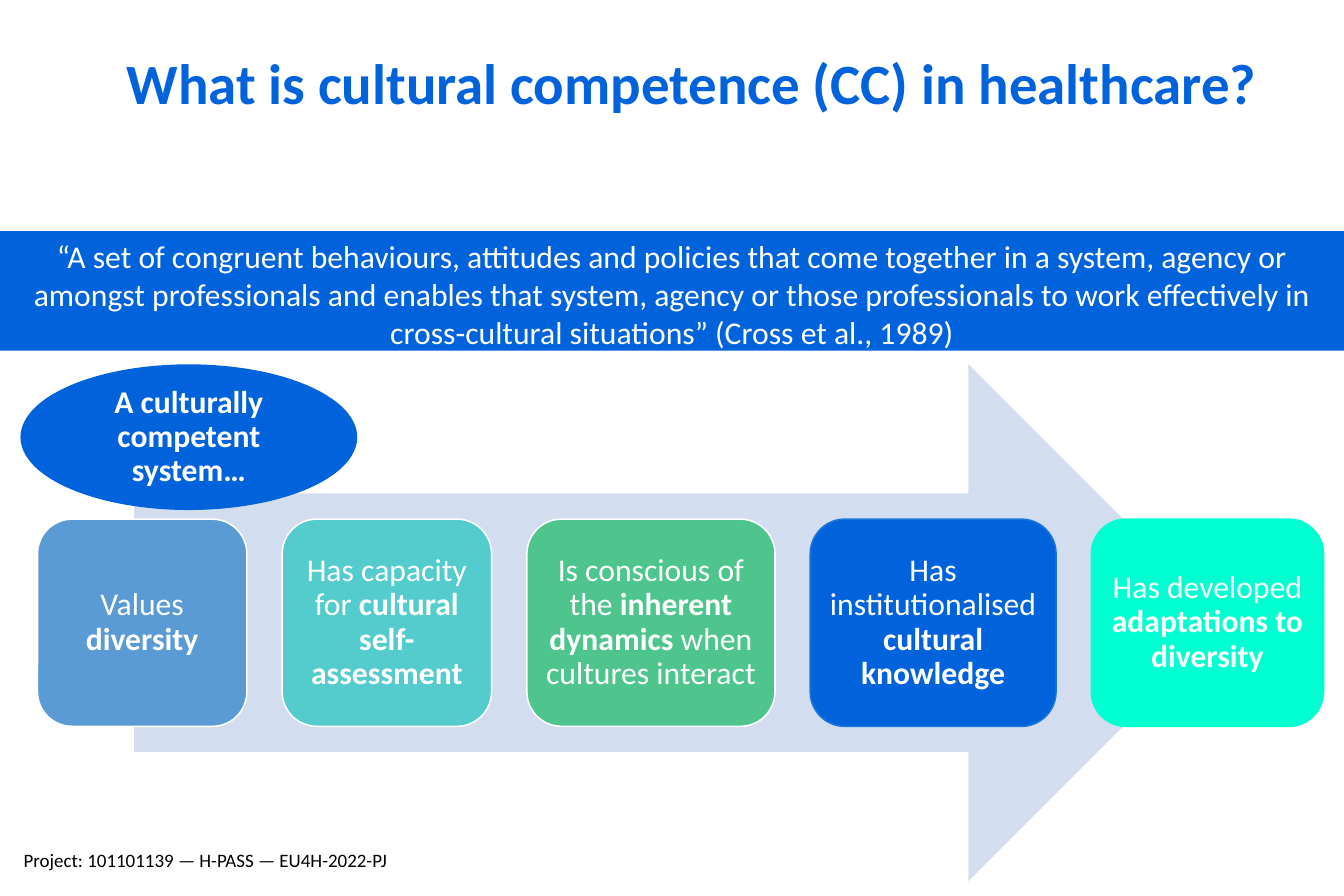
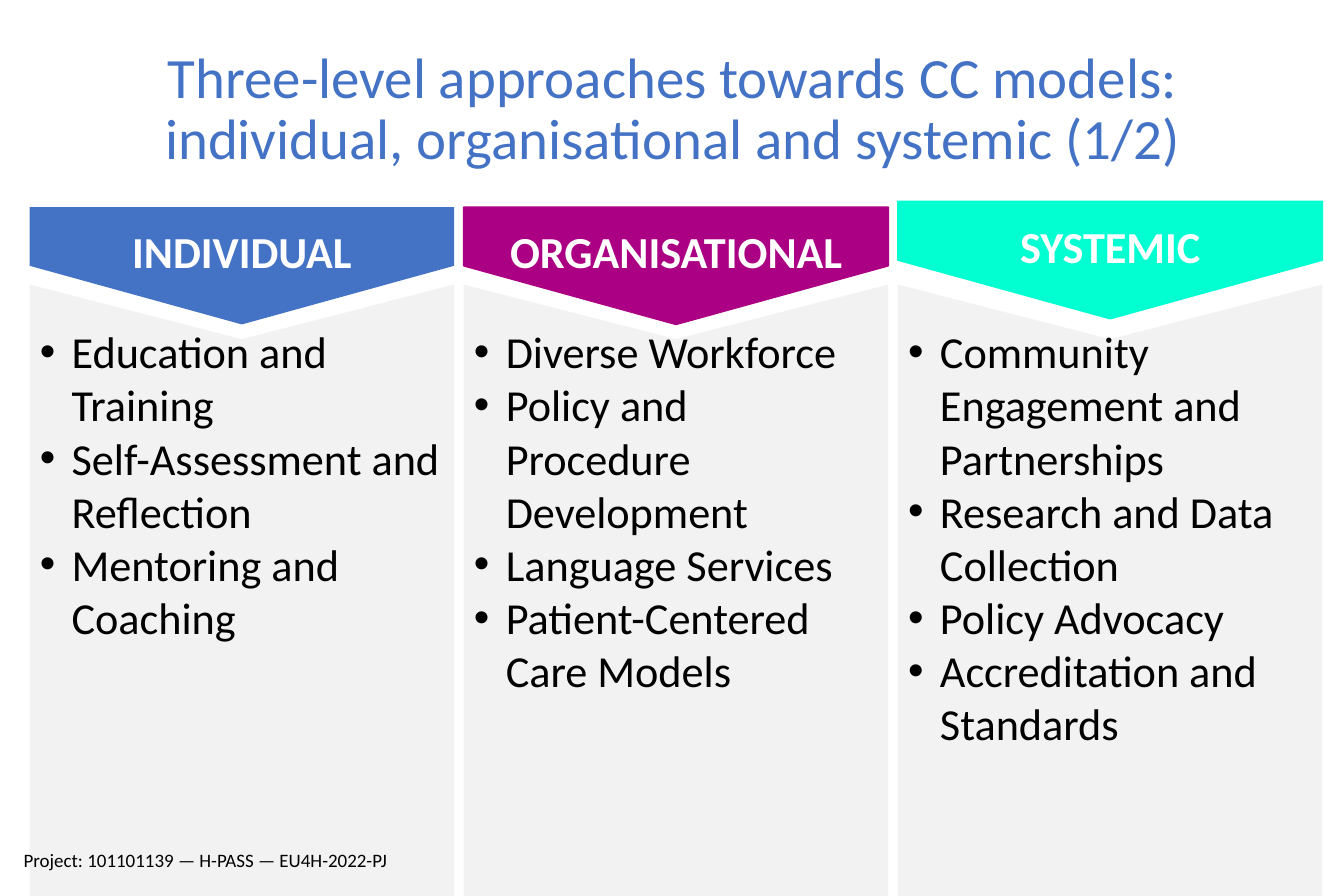
from dataclasses import dataclass
from pptx import Presentation
from pptx.dml.color import RGBColor
from pptx.enum.shapes import MSO_SHAPE
from pptx.enum.text import MSO_ANCHOR, MSO_AUTO_SIZE, PP_ALIGN
from pptx.oxml.ns import qn
from pptx.util import Inches, Pt


@dataclass(frozen=True)
class Theme:
    font: str = "Calibri"
    blue: str = "0063DC"
    blue_edge: str = "1A75DB"
    royal: str = "4472C4"
    sky: str = "5B9BD5"
    teal: str = "54CCCD"
    green: str = "4DC58D"
    mint: str = "02FFD2"
    magenta: str = "AB0084"
    pale: str = "D2DEEF"
    grey: str = "F2F2F2"
    white: str = "FFFFFF"
    black: str = "000000"
    title_size: int = 36
    heading_size: int = 28
    body_size: int = 20
    footer_size: int = 12


THEME = Theme()
FOOTER = "Project: 101101139 — H-PASS — EU4H-2022-PJ"


class Deck:
    def __init__(self, theme):
        self.theme = theme
        self.prs = Presentation()
        self.prs.slide_width = Inches(11.81)
        self.prs.slide_height = Inches(7.87)
        self.slide = None

    def start_slide(self, title, left, top, width, height, color, bold=False):
        self.slide = self.prs.slides.add_slide(self.prs.slide_layouts[5])
        heading = self.slide.shapes.title
        heading.left, heading.top = Inches(left), Inches(top)
        heading.width, heading.height = Inches(width), Inches(height)
        heading.text_frame.text = title
        self.format_text(heading.text_frame, self.theme.title_size, color, bold,
                         anchor=MSO_ANCHOR.TOP, spacing=0.9)

    def format_text(self, frame, size, color, bold=None, align=PP_ALIGN.CENTER,
                    anchor=MSO_ANCHOR.MIDDLE, spacing=None):
        frame.word_wrap = True
        frame.auto_size = MSO_AUTO_SIZE.NONE
        frame.vertical_anchor = anchor
        for paragraph in frame.paragraphs:
            paragraph.alignment = align
            paragraph.line_spacing = spacing
            for run in paragraph.runs:
                run.font.name = self.theme.font
                run.font.size = Pt(size)
                run.font.color.rgb = RGBColor.from_string(color)
                if bold is not None:
                    run.font.bold = bold

    def set_insets(self, frame, left, top, right, bottom):
        frame.margin_left, frame.margin_top = Inches(left), Inches(top)
        frame.margin_right, frame.margin_bottom = Inches(right), Inches(bottom)

    def paint(self, shape, fill, edge=None):
        shape.shadow.inherit = False
        shape.fill.solid()
        shape.fill.fore_color.rgb = RGBColor.from_string(fill)
        if edge:
            shape.line.color.rgb = RGBColor.from_string(edge)
            shape.line.width = Pt(1)
        else:
            shape.line.fill.background()

    def block(self, kind, left, top, width, height, fill, edge=None):
        shape = self.slide.shapes.add_shape(
            kind, Inches(left), Inches(top), Inches(width), Inches(height))
        self.paint(shape, fill, edge)
        return shape

    def label(self, kind, left, top, width, height, fill, text, **style):
        frame = self.block(kind, left, top, width, height, fill).text_frame
        frame.text = text
        self.format_text(frame, self.theme.body_size, self.theme.white, **style)

    def card(self, left, top, width, height, fill, edge, phrases):
        frame = self.block(MSO_SHAPE.ROUNDED_RECTANGLE, left, top, width, height,
                           fill, edge).text_frame
        self.set_insets(frame, 0.08, 0.08, 0.08, 0.08)
        for position, phrase in enumerate(phrases):
            run = frame.paragraphs[0].add_run()
            run.text = phrase
            run.font.bold = position % 2 == 1
        self.format_text(frame, self.theme.body_size, self.theme.white, spacing=0.9)

    def header(self, left, top, width, height, fill, edge, text):
        plate = self.block(MSO_SHAPE.PENTAGON, left + (width - height) / 2,
                           top + (height - width) / 2, height, width, fill, edge)
        plate.rotation = 90
        frame = plate.text_frame
        frame.text = text
        self.format_text(frame, self.theme.heading_size, self.theme.white, True)
        frame._txBody.bodyPr.set("vert", "vert270")

    def notched_list(self, left, top, width, height, notch, items):
        right, bottom = left + width, top + height
        corners = [(left + width / 2, top + notch), (right, top),
                   (right, bottom), (left, bottom)]
        builder = self.slide.shapes.build_freeform(Inches(left), Inches(top))
        builder.add_line_segments([(Inches(x), Inches(y)) for x, y in corners])
        panel = builder.convert_to_shape()
        self.paint(panel, self.theme.grey)
        frame = panel.text_frame
        self.set_insets(frame, 0.09, 0.35, 0.09, 0.04)
        frame.text = "\n".join(items)
        for paragraph in frame.paragraphs:
            properties = paragraph._p.get_or_add_pPr()
            properties.set("marL", str(Inches(0.28)))
            properties.set("indent", str(Inches(-0.28)))
            for tag, name, value in (("a:buFont", "typeface", "Arial"),
                                     ("a:buChar", "char", "•")):
                bullet = properties.makeelement(qn(tag), {name: value})
                properties.append(bullet)
        self.format_text(frame, self.theme.heading_size, self.theme.black,
                         align=PP_ALIGN.LEFT, anchor=MSO_ANCHOR.TOP)

    def footer(self):
        box = self.slide.shapes.add_textbox(
            Inches(0.11), Inches(7.4), Inches(3.63), Inches(0.27))
        box.text_frame.text = FOOTER
        self.format_text(box.text_frame, self.theme.footer_size, self.theme.black,
                         align=PP_ALIGN.LEFT, anchor=MSO_ANCHOR.TOP)


def build_definition(deck):
    t = deck.theme
    deck.start_slide("What is cultural competence (CC) in healthcare?",
                     0.77, 0.44, 10.62, 0.77, t.blue, True)
    deck.label(MSO_SHAPE.RECTANGLE, 0, 2.03, 11.81, 1.05, t.blue,
               "“A set of congruent behaviours, attitudes and policies that come "
               "together in a system, agency or amongst professionals and enables "
               "that system, agency or those professionals to work effectively in "
               "cross-cultural situations” (Cross et al., 1989)",
               anchor=MSO_ANCHOR.TOP)
    deck.block(MSO_SHAPE.RIGHT_ARROW, 1.18, 3.2, 9.6, 4.54, t.pale)
    qualities = [
        (1.84, t.sky, t.white, ("Values ", "diversity")),
        (1.84, t.teal, t.white, ("Has capacity for ", "cultural self-assessment")),
        (2.18, t.green, t.white,
         ("Is conscious of the ", "inherent dynamics ", "when cultures interact")),
        (2.16, t.blue, t.blue_edge, ("Has institutionalised ", "cultural knowledge")),
        (2.04, t.mint, t.mint, ("Has developed ", "adaptations to diversity")),
    ]
    left, gap = 0.33, 0.31
    for width, fill, edge, phrases in qualities:
        deck.card(left, 4.56, width, 1.82, fill, edge, phrases)
        left += width + gap
    deck.label(MSO_SHAPE.OVAL, 0.18, 3.2, 2.96, 1.28, t.blue,
               "A culturally competent system…", bold=True, spacing=0.9)
    deck.footer()


def build_levels(deck):
    t = deck.theme
    deck.start_slide("Three-level approaches towards CC models: individual, "
                     "organisational and systemic (1/2)",
                     0.6, 0.38, 10.62, 1.09, t.royal)
    levels = [
        ("INDIVIDUAL", 1.82, t.royal, None,
         ["Education and Training", "Self-Assessment and Reflection",
          "Mentoring and Coaching"]),
        ("ORGANISATIONAL", 1.82, t.magenta, t.magenta,
         ["Diverse Workforce", "Policy and Procedure Development",
          "Language Services", "Patient-Centered Care Models"]),
        ("SYSTEMIC", 1.77, t.mint, t.mint,
         ["Community Engagement and Partnerships", "Research and Data Collection",
          "Policy Advocacy", "Accreditation and Standards"]),
    ]
    width, pitch = 3.73, 3.815
    for column, (name, top, fill, edge, items) in enumerate(levels):
        left = 0.26 + column * pitch
        deck.notched_list(left, 2.5, width, 5.37, 0.48, items)
        deck.header(left, top, width, 1.03, fill, edge, name)
    deck.footer()


def main():
    deck = Deck(THEME)
    build_definition(deck)
    build_levels(deck)
    deck.prs.save("out.pptx")


if __name__ == "__main__":
    main()
